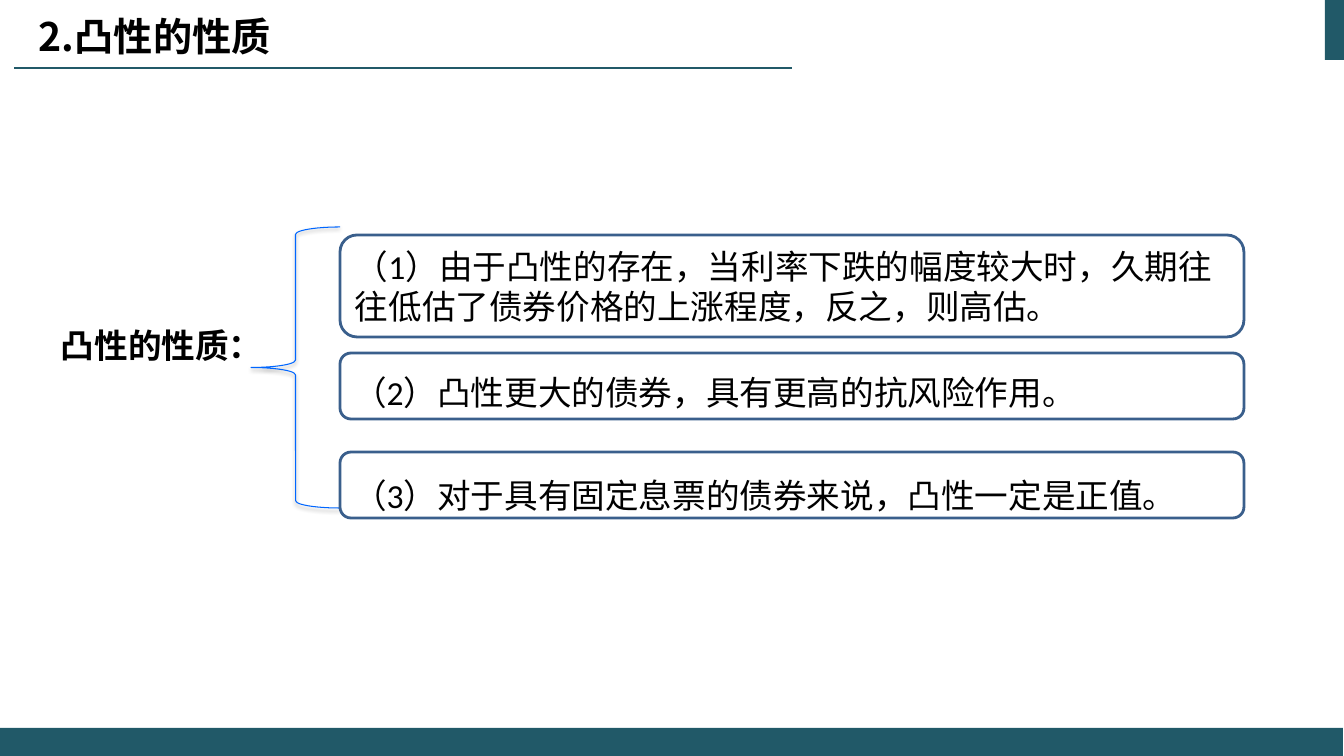
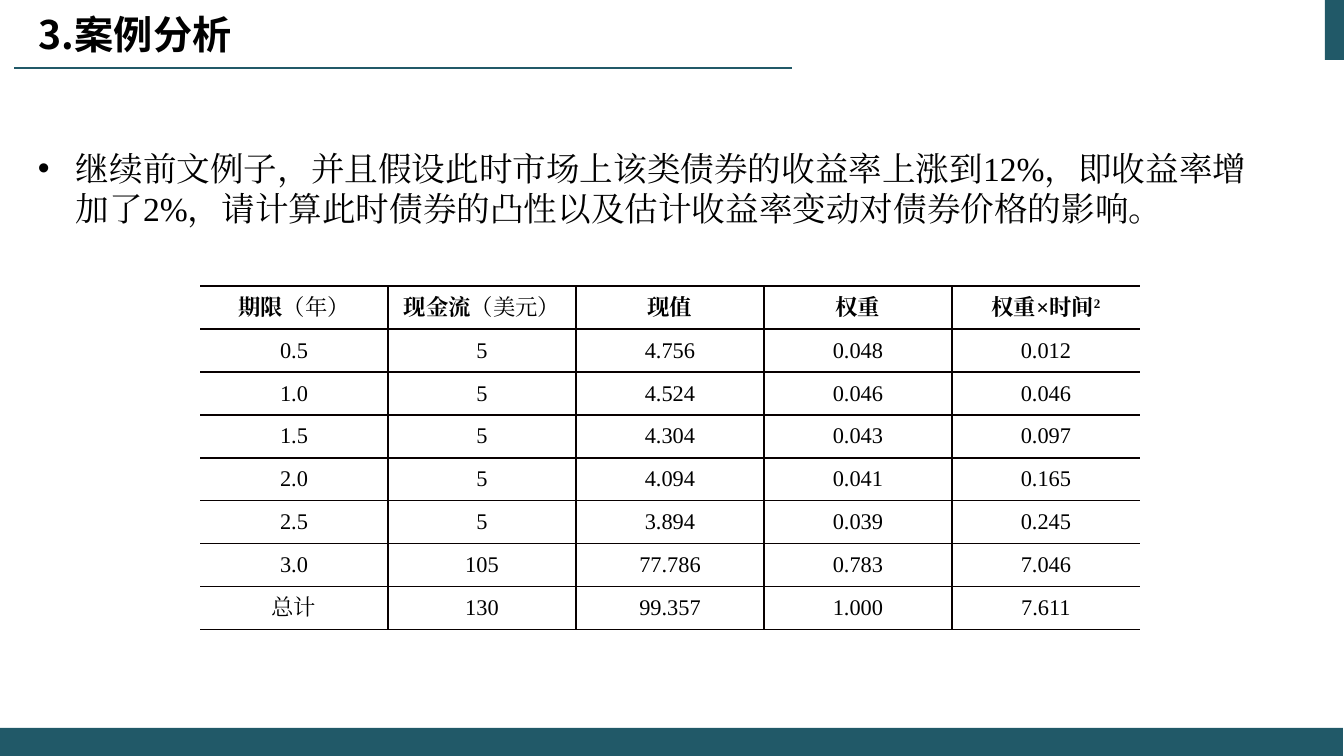
"""Build two slides on bond convexity: its properties and a worked case."""
import pptx
import pptx.dml.color
import pptx.enum.shapes
import pptx.enum.text
import pptx.oxml
import pptx.oxml.ns
import pptx.util

PX_PER_INCH = 100.8
COLORS = {
    "band": "215968",
    "text": "000000",
    "brace": "0066FF",
    "outline": "3A5F8C",
    "grid": "080000",
}
HEADING_FONT = "Noto Sans CJK SC"
BOX_FONT = "Calibri"
BODY_FONT = "Times New Roman"
NO_TABLE_STYLE = "{2D5ABB26-0587-4C30-8999-92F81FD0307C}"
SHAPES = pptx.enum.shapes.MSO_SHAPE
ANCHOR = pptx.enum.text.MSO_ANCHOR
ALIGN = pptx.enum.text.PP_ALIGN

PROPERTY_BOXES = [
    (235, 102, 1.0, "（1）由于凸性的存在，当利率下跌的幅度较大时，久期往往低估了债券价格的上涨程度，反之，则高估。"),
    (353, 66, 1.3, "（2）凸性更大的债券，具有更高的抗风险作用。"),
    (452, 66, 1.5, "（3）对于具有固定息票的债券来说，凸性一定是正值。"),
]
CASE_TEXT = "继续前文例子，并且假设此时市场上该类债券的收益率上涨到12%，即收益率增加了2%，请计算此时债券的凸性以及估计收益率变动对债券价格的影响。"
TABLE_HEADER = [
    [("期限", True, 0), ("（年）", False, 0)],
    [("现金流", True, 0), ("（美元）", False, 0)],
    [("现值", True, 0)],
    [("权重", True, 0)],
    [("权重×时间", True, 0), ("2", True, 30)],
]
TABLE_ROWS = [
    ["0.5", "5", "4.756", "0.048", "0.012"],
    ["1.0", "5", "4.524", "0.046", "0.046"],
    ["1.5", "5", "4.304", "0.043", "0.097"],
    ["2.0", "5", "4.094", "0.041", "0.165"],
    ["2.5", "5", "3.894", "0.039", "0.245"],
    ["3.0", "105", "77.786", "0.783", "7.046"],
    ["总计", "130", "99.357", "1.000", "7.611"],
]


def px(length):
    return pptx.util.Emu(round(length * 914400 / PX_PER_INCH))


def color(name):
    return pptx.dml.color.RGBColor.from_string(COLORS[name])


def add_xml(parent, tag, **attributes):
    element = pptx.oxml.parse_xml(f"<{tag} {pptx.oxml.ns.nsdecls('a')}/>")
    for name, value in attributes.items():
        element.set(name, str(value))
    parent.append(element)
    return element


def add_run(paragraph, text, font, size, bold=False, baseline=0):
    run = paragraph.add_run()
    run.text = text
    run.font.name = font
    run.font.size = pptx.util.Pt(size)
    run.font.bold = bold
    run.font.color.rgb = color("text")
    properties = run.font._element
    add_xml(properties, "a:ea", typeface=font)
    if baseline:
        properties.set("baseline", str(baseline * 1000))


def add_text_box(slide, left, top, width, height, anchor=ANCHOR.MIDDLE, wrap=True):
    frame = slide.shapes.add_textbox(px(left), px(top), px(width), px(height)).text_frame
    frame.word_wrap = wrap
    frame.vertical_anchor = anchor
    return frame


def add_shape(slide, kind, left, top, width, height, fill=None, line=None, weight=1):
    shape = slide.shapes.add_shape(kind, px(left), px(top), px(width), px(height))
    shape.shadow.inherit = False
    if fill:
        shape.fill.solid()
        shape.fill.fore_color.rgb = color(fill)
    else:
        shape.fill.background()
    if line:
        shape.line.color.rgb = color(line)
        shape.line.width = pptx.util.Pt(weight)
    else:
        shape.line.fill.background()
    return shape


def add_title_rule(slide):
    connector = slide.shapes.add_connector(
        pptx.enum.shapes.MSO_CONNECTOR.STRAIGHT, px(792), px(68), px(14), px(68))
    connector.line.color.rgb = color("band")
    connector.line.width = pptx.util.Pt(1.5)
    add_xml(connector._element.spPr, "a:effectLst")


def add_slide(presentation, title, title_height):
    slide = presentation.slides.add_slide(presentation.slide_layouts[6])
    add_shape(slide, SHAPES.RECTANGLE, 1325, 0, 20, 60, fill="band")
    add_title_rule(slide)
    add_shape(slide, SHAPES.RECTANGLE, 0, 728, 1343, 28, fill="band")
    frame = add_text_box(slide, 29, 5, 560, title_height)
    add_run(frame.paragraphs[0], title, HEADING_FONT, 28, bold=True)
    return slide


def add_brace(slide):
    brace = add_shape(slide, SHAPES.LEFT_BRACE, 251, 227, 89, 281, line="brace", weight=0.75)
    effects = brace._element.spPr.find(pptx.oxml.ns.qn("a:effectLst"))
    shadow = add_xml(effects, "a:outerShdw", blurRad=pptx.util.Pt(3.1),
                     dist=pptx.util.Pt(1.6), dir=90 * 60000, rotWithShape=0)
    shade = add_xml(shadow, "a:srgbClr", val=COLORS["text"])
    add_xml(shade, "a:alpha", val=38000)


def add_property_box(slide, top, height, spacing, text):
    box = add_shape(slide, SHAPES.ROUNDED_RECTANGLE, 340, top, 904, height,
                    line="outline", weight=2)
    frame = box.text_frame
    frame.word_wrap = True
    frame.vertical_anchor = ANCHOR.MIDDLE
    paragraph = frame.paragraphs[0]
    paragraph.alignment = ALIGN.LEFT
    paragraph.line_spacing = spacing
    add_run(paragraph, text, BOX_FONT, 24)


def add_bullet(slide, text):
    frame = add_text_box(slide, 28, 143, 1248, 92, ANCHOR.TOP)
    paragraph = frame.paragraphs[0]
    properties = paragraph._p.get_or_add_pPr()
    properties.set("marL", str(px(38)))
    properties.set("indent", str(px(-38)))
    add_xml(properties, "a:buFont", typeface="Arial")
    add_xml(properties, "a:buChar", char="•")
    add_run(paragraph, text, BODY_FONT, 24)


def set_borders(cell, sides):
    properties = cell._tc.get_or_add_tcPr()
    for side in "LRTB":
        border = add_xml(properties, f"a:ln{side}", w=pptx.util.Pt(1))
        if side in sides:
            fill = add_xml(border, "a:solidFill")
            add_xml(fill, "a:srgbClr", val=COLORS["grid"])
        else:
            add_xml(border, "a:noFill")


def fill_cell(cell, runs, sides):
    cell.vertical_anchor = ANCHOR.MIDDLE
    cell.margin_left = cell.margin_right = px(7)
    cell.margin_top = cell.margin_bottom = 0
    set_borders(cell, sides)
    cell.fill.background()
    paragraph = cell.text_frame.paragraphs[0]
    paragraph.alignment = ALIGN.CENTER
    for text, bold, baseline in runs:
        add_run(paragraph, text, BODY_FONT, 16, bold, baseline)


def add_cash_flow_table(slide):
    rows = [TABLE_HEADER] + [[[(text, False, 0)] for text in row] for row in TABLE_ROWS]
    column_count = len(TABLE_HEADER)
    frame = slide.shapes.add_table(len(rows), column_count, px(200), px(286),
                                   px(188 * column_count), px(43 * len(rows)))
    table = frame.table
    table.first_row = table.horz_banding = False
    style = table._tbl.tblPr.find(pptx.oxml.ns.qn("a:tableStyleId"))
    style.text = NO_TABLE_STYLE
    for row_index, row in enumerate(rows):
        for column_index, runs in enumerate(row):
            sides = "TB"
            if column_index > 0:
                sides += "L"
            if column_index < column_count - 1:
                sides += "R"
            fill_cell(table.cell(row_index, column_index), runs, sides)


def build_properties_slide(presentation):
    slide = add_slide(presentation, "2.凸性的性质", 62)
    label = add_text_box(slide, 51, 320, 224, 50, wrap=False)
    add_run(label.paragraphs[0], "凸性的性质：", HEADING_FONT, 24, bold=True)
    add_brace(slide)
    for property_box in PROPERTY_BOXES:
        add_property_box(slide, *property_box)


def build_case_slide(presentation):
    slide = add_slide(presentation, "3.案例分析", 58)
    add_bullet(slide, CASE_TEXT)
    add_cash_flow_table(slide)


def main():
    presentation = pptx.Presentation()
    presentation.slide_width = px(1344)
    presentation.slide_height = px(756)
    build_properties_slide(presentation)
    build_case_slide(presentation)
    presentation.save("out.pptx")


if __name__ == "__main__":
    main()
